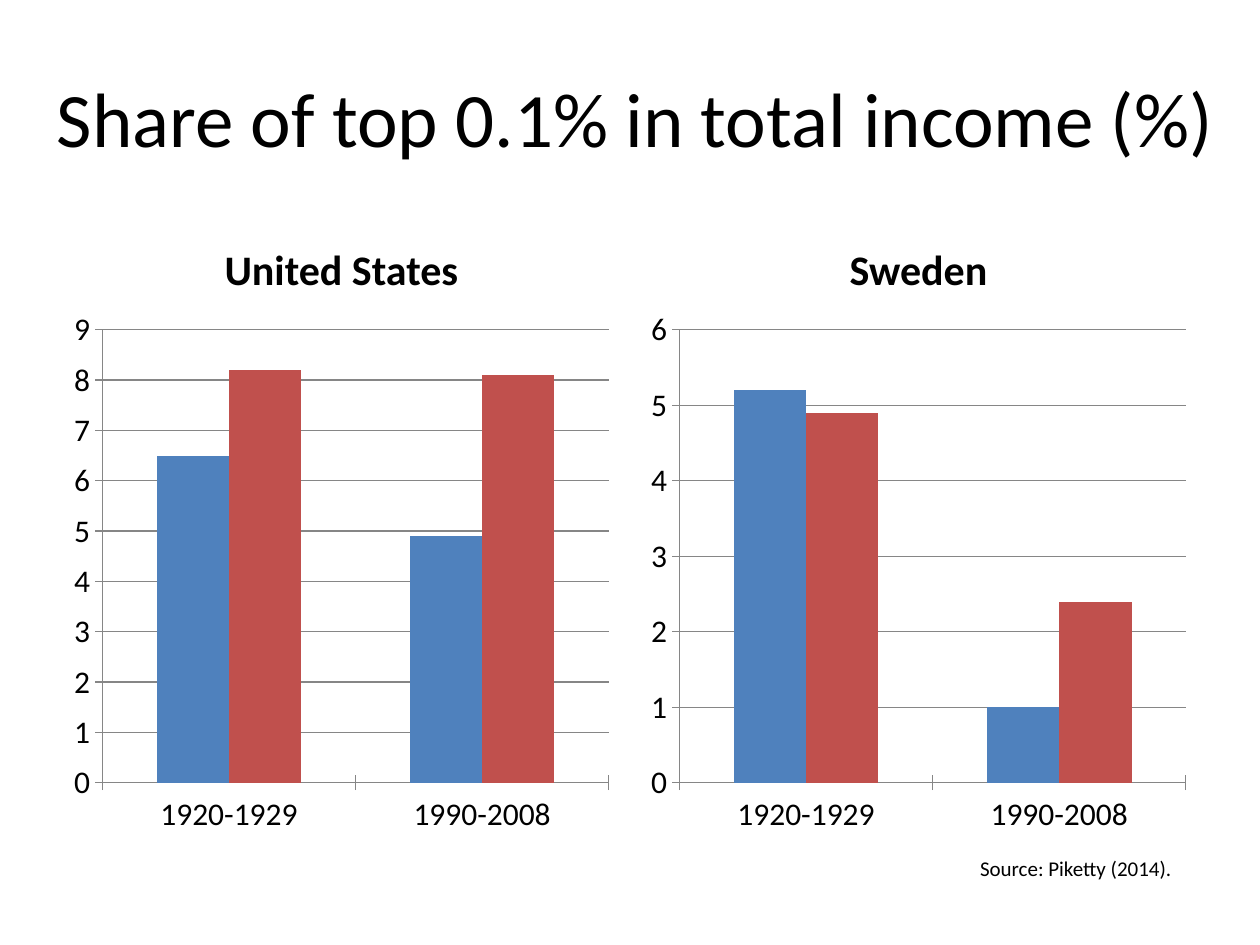
import pptx
import pptx.chart.data
import pptx.dml.color
import pptx.enum.chart
import pptx.enum.text
import pptx.util

BLACK = pptx.dml.color.RGBColor(0x00, 0x00, 0x00)
GRAY = pptx.dml.color.RGBColor(0x86, 0x86, 0x86)
BLUE = pptx.dml.color.RGBColor(0x4F, 0x81, 0xBD)
RED = pptx.dml.color.RGBColor(0xC0, 0x50, 0x4D)
FONT = "Calibri"
inch = pptx.util.Inches


def write(box, text, size, bold=False):
    """Put one formatted paragraph in a box and return it."""
    box.text_frame.text = text
    para = box.text_frame.paragraphs[0]
    font = para.runs[0].font
    font.name, font.size, font.bold = FONT, pptx.util.Pt(size), bold
    font.color.rgb = BLACK
    return para


def place(box, left, top, width, height):
    box.left, box.top, box.width, box.height = map(inch, (left, top, width, height))


deck = pptx.Presentation()
deck.slide_width, deck.slide_height = inch(10), inch(7.5)
page = deck.slides.add_slide(deck.slide_layouts.get_by_name("Comparison"))

# Two equal columns between the margins
MARGIN, GUTTER = 0.5, 0.16
COLUMN = (10 - 2 * MARGIN - GUTTER) / 2
HEADING_TOP, HEADING_HEIGHT = 1.68, 0.7
CHART_TOP, CHART_HEIGHT = HEADING_TOP + HEADING_HEIGHT, 4.32

# Title
title = page.shapes.title
place(title, 0.28, 0.3, 9.53, 1.25)
title.text_frame.vertical_anchor = pptx.enum.text.MSO_ANCHOR.MIDDLE
write(title, "Share of top 0.1% in total income (%)", 44).alignment = pptx.enum.text.PP_ALIGN.CENTER

# Heading and chart for each country: heading slot, empty slot, axis top, series
countries = [
    ("United States", 1, 2, 9, [(6.5, 4.9), (8.2, 8.1)]),
    ("Sweden", 3, 4, 6, [(5.2, 1), (4.9, 2.4)]),
]
for column, (country, heading_slot, chart_slot, top_value, shares) in enumerate(countries):
    left = MARGIN + column * (COLUMN + GUTTER)
    heading = page.placeholders[heading_slot]
    place(heading, left, HEADING_TOP, COLUMN, HEADING_HEIGHT)
    heading.text_frame.vertical_anchor = pptx.enum.text.MSO_ANCHOR.BOTTOM
    write(heading, country, 24, True).alignment = pptx.enum.text.PP_ALIGN.CENTER

    # The chart takes the place of the empty content placeholder
    empty = page.placeholders[chart_slot].element
    empty.getparent().remove(empty)

    data = pptx.chart.data.CategoryChartData()
    data.categories = ["1920-1929", "1990-2008"]
    for number, values in enumerate(shares, 1):
        data.add_series(f"Series {number}", values)
    chart = page.shapes.add_chart(
        pptx.enum.chart.XL_CHART_TYPE.COLUMN_CLUSTERED,
        inch(left), inch(CHART_TOP), inch(COLUMN), inch(CHART_HEIGHT), data,
    ).chart
    chart.has_title = chart.has_legend = False
    chart.font.name, chart.font.size = FONT, pptx.util.Pt(18)
    chart.font.color.rgb = BLACK

    plot = chart.plots[0]
    plot.vary_by_categories = False
    plot.gap_width, plot.overlap = 150, 0
    for series, color in zip(plot.series, (BLUE, RED)):
        series.format.fill.solid()
        series.format.fill.fore_color.rgb = color

    scale = chart.value_axis
    scale.minimum_scale, scale.maximum_scale, scale.major_unit = 0, top_value, 1
    scale.has_major_gridlines = True
    for axis in (chart.category_axis, scale):
        axis.major_tick_mark = pptx.enum.chart.XL_TICK_MARK.CROSS
    for ruled in (chart.category_axis, scale, scale.major_gridlines):
        ruled.format.line.color.rgb = GRAY
        ruled.format.line.width = pptx.util.Pt(0.75)

# Source note
note = page.shapes.add_textbox(inch(7.68), inch(6.74), inch(1.74), inch(0.3))
note.text_frame.word_wrap = False
note.text_frame.auto_size = pptx.enum.text.MSO_AUTO_SIZE.SHAPE_TO_FIT_TEXT
write(note, "Source: Piketty (2014).", 12)

deck.save("out.pptx")
